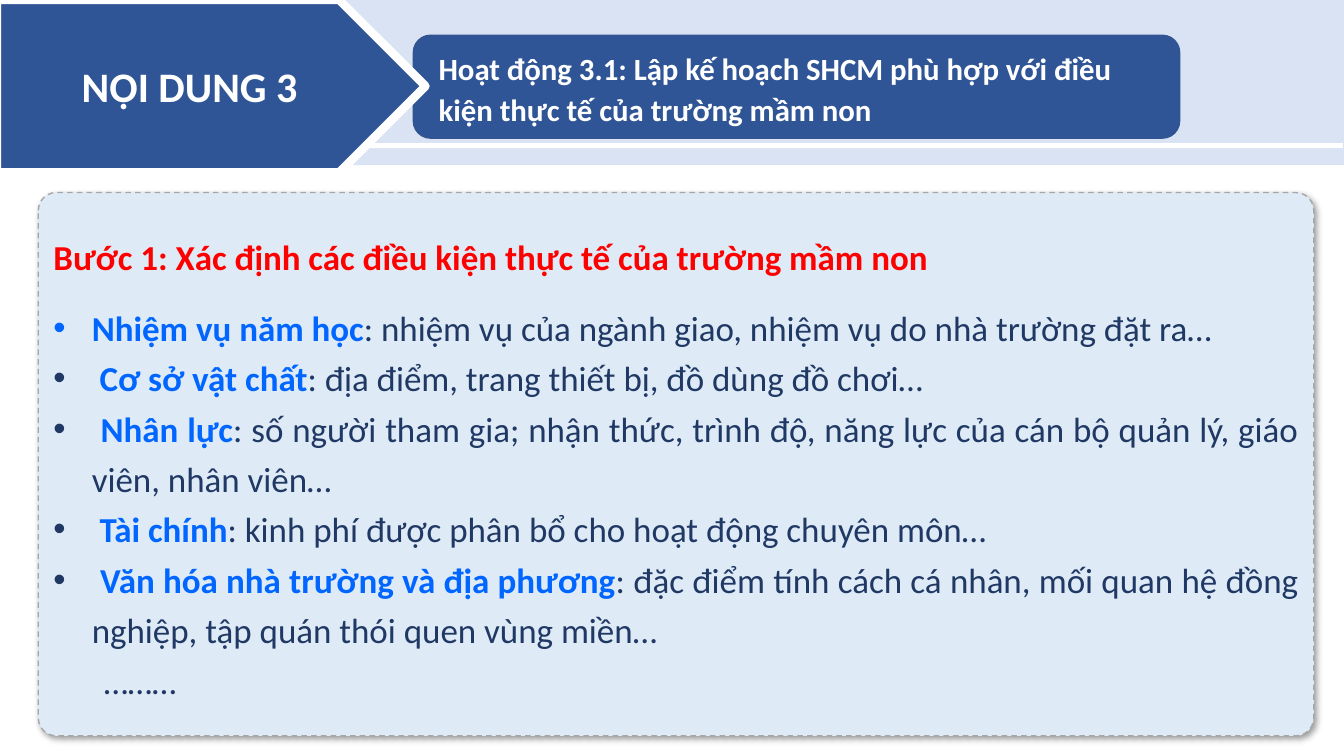
from dataclasses import dataclass
from typing import Any

from lxml.etree import SubElement
from pptx import Presentation
from pptx.dml.color import RGBColor
from pptx.enum.dml import MSO_LINE
from pptx.enum.shapes import MSO_SHAPE
from pptx.enum.text import MSO_ANCHOR, MSO_AUTO_SIZE, PP_ALIGN
from pptx.oxml.ns import qn
from pptx.util import Inches, Pt


@dataclass(frozen=True)
class Theme:
    font: str = "Calibri"
    white: str = "FFFFFF"
    band: str = "DAE3F3"
    panel: str = "DEEBF7"
    navy: str = "2F5597"
    edge: str = "325491"
    dash: str = "A6A6A6"
    red: str = "FF0000"
    key: str = "0066FF"
    ink: str = "203864"
    shade: str = "000000"
    body: int = 25
    head: int = 22
    label: int = 30


@dataclass(frozen=True)
class Block:
    kind: MSO_SHAPE
    box: tuple[float, float, float, float]
    fill: str
    line: str = ""
    width: float = 1


@dataclass(frozen=True)
class Point:
    key: str
    text: str
    lead: str = " "


THEME = Theme()
BAND = Block(MSO_SHAPE.RECTANGLE, (0, 0, 13.33, 1.64), THEME.band)
STRIPE = Block(MSO_SHAPE.RECTANGLE, (2.22, 1.42, 11.1, 0.05), THEME.white)
PANEL = Block(MSO_SHAPE.ROUNDED_RECTANGLE, (0.38, 1.91, 12.65, 5.39), THEME.panel, THEME.dash)
PLATE = Block(MSO_SHAPE.ROUNDED_RECTANGLE, (4.1, 0.35, 7.6, 1.02), THEME.navy, THEME.edge)
ARROW = Block(MSO_SHAPE.PENTAGON, (-0.03, 0, 4.25, 1.71), THEME.navy, THEME.white, 6)
TITLE_BOX = (4.25, 0.41, 7.45, 0.9)
POINTS = (
    Point("Nhiệm vụ năm học", ": nhiệm vụ của ngành giao, nhiệm vụ do nhà trường đặt ra…", ""),
    Point("Cơ sở vật chất", ": địa điểm, trang thiết bị, đồ dùng đồ chơi…"),
    Point("Nhân lực", ": số người tham gia; nhận thức, trình độ, năng lực của cán bộ quản lý, "
          "giáo viên, nhân viên…"),
    Point("Tài chính", ": kinh phí được phân bổ cho hoạt động chuyên môn…"),
    Point("Văn hóa nhà trường và địa phương", ": đặc điểm tính cách cá nhân, mối quan hệ đồng "
          "nghiệp, tập quán thói quen vùng miền…"),
)


def style(item: Any, form: dict[str, Any]) -> None:
    for name, value in form.items():
        setattr(item, name, value)


def place(shape: Any, box: tuple[float, float, float, float]) -> None:
    style(shape, dict(zip(("left", "top", "width", "height"), map(Inches, box))))


def draw(slide: Any, block: Block) -> Any:
    shape = slide.shapes.add_shape(block.kind, *map(Inches, block.box))
    shape.shadow.inherit = False
    shape.fill.solid()
    shape.fill.fore_color.rgb = RGBColor.from_string(block.fill)
    if block.line:
        shape.line.color.rgb = RGBColor.from_string(block.line)
        shape.line.width = Pt(block.width)
    else:
        shape.line.fill.background()
    return shape


def write(para: Any, text: str, size: int, color: str, bold: bool = True) -> None:
    run = para.add_run()
    run.text = text
    style(run.font, {"name": THEME.font, "size": Pt(size), "bold": bold})
    run.font.color.rgb = RGBColor.from_string(color)


def indent(para: Any, left: float, bullet: bool) -> None:
    """Set the left margin, with a hanging bullet if asked."""
    props = para._p.get_or_add_pPr()
    props.set("marL", str(Inches(left)))
    props.set("indent", str(-Inches(left) if bullet else 0))
    if bullet:
        SubElement(props, qn("a:buFont"), typeface="Arial")
        SubElement(props, qn("a:buChar"), char="•")


def cast(shape: Any) -> None:
    """Give the shape a soft outer shadow."""
    effects = shape._element.spPr.find(qn("a:effectLst"))
    outer = SubElement(effects, qn("a:outerShdw"), blurRad=str(Pt(4)), dist=str(Pt(3)),
                       dir="2700000", algn="tl", rotWithShape="0")
    color = SubElement(outer, qn("a:srgbClr"), val=THEME.shade)
    SubElement(color, qn("a:alpha"), val="40000")


def fill_panel(panel: Any) -> None:
    panel.adjustments[0] = 0.033
    panel.line.dash_style = MSO_LINE.DASH
    cast(panel)
    frame = panel.text_frame
    style(frame, {"word_wrap": True, "vertical_anchor": MSO_ANCHOR.MIDDLE})
    para = frame.paragraphs[0]
    style(para, {"alignment": PP_ALIGN.LEFT, "line_spacing": 1.2, "space_after": Pt(14.6)})
    write(para, "Bước 1: Xác định các điều kiện thực tế của trường mầm non", THEME.body, THEME.red)
    form = {"alignment": PP_ALIGN.JUSTIFY, "line_spacing": 1.2}
    for point in POINTS:
        para = frame.add_paragraph()
        style(para, form)
        indent(para, 0.38, True)
        if point.lead:
            write(para, point.lead, THEME.body, THEME.ink, False)
        write(para, point.key, THEME.body, THEME.key)
        write(para, point.text, THEME.body, THEME.ink, False)
    para = frame.add_paragraph()
    style(para, form)
    indent(para, 0.5, False)
    write(para, "………", THEME.body, THEME.ink, False)


def fill_arrow(arrow: Any) -> None:
    frame = arrow.text_frame
    style(frame, {"word_wrap": True, "vertical_anchor": MSO_ANCHOR.MIDDLE})
    para = frame.paragraphs[0]
    para.alignment = PP_ALIGN.CENTER
    write(para, "NỘI DUNG 3", THEME.label, THEME.white)


def set_title(slide: Any) -> None:
    title = slide.shapes.title
    place(title, TITLE_BOX)
    slide.shapes.element.append(title.element)  # bring in front of the plate
    frame = title.text_frame
    style(frame, {"word_wrap": True, "vertical_anchor": MSO_ANCHOR.TOP,
                  "auto_size": MSO_AUTO_SIZE.NONE})
    para = frame.paragraphs[0]
    style(para, {"alignment": PP_ALIGN.LEFT, "line_spacing": 1.1})
    write(para, "Hoạt động 3.1: Lập kế hoạch SHCM phù hợp với điều kiện thực tế của trường mầm non",
          THEME.head, THEME.white)


def main() -> None:
    deck = Presentation()
    style(deck, {"slide_width": Inches(13.33), "slide_height": Inches(7.5)})
    slide = deck.slides.add_slide(deck.slide_layouts[5])
    for block in (BAND, STRIPE):
        draw(slide, block)
    fill_panel(draw(slide, PANEL))
    draw(slide, PLATE)
    fill_arrow(draw(slide, ARROW))
    set_title(slide)
    deck.save("out.pptx")


if __name__ == "__main__":
    main()
